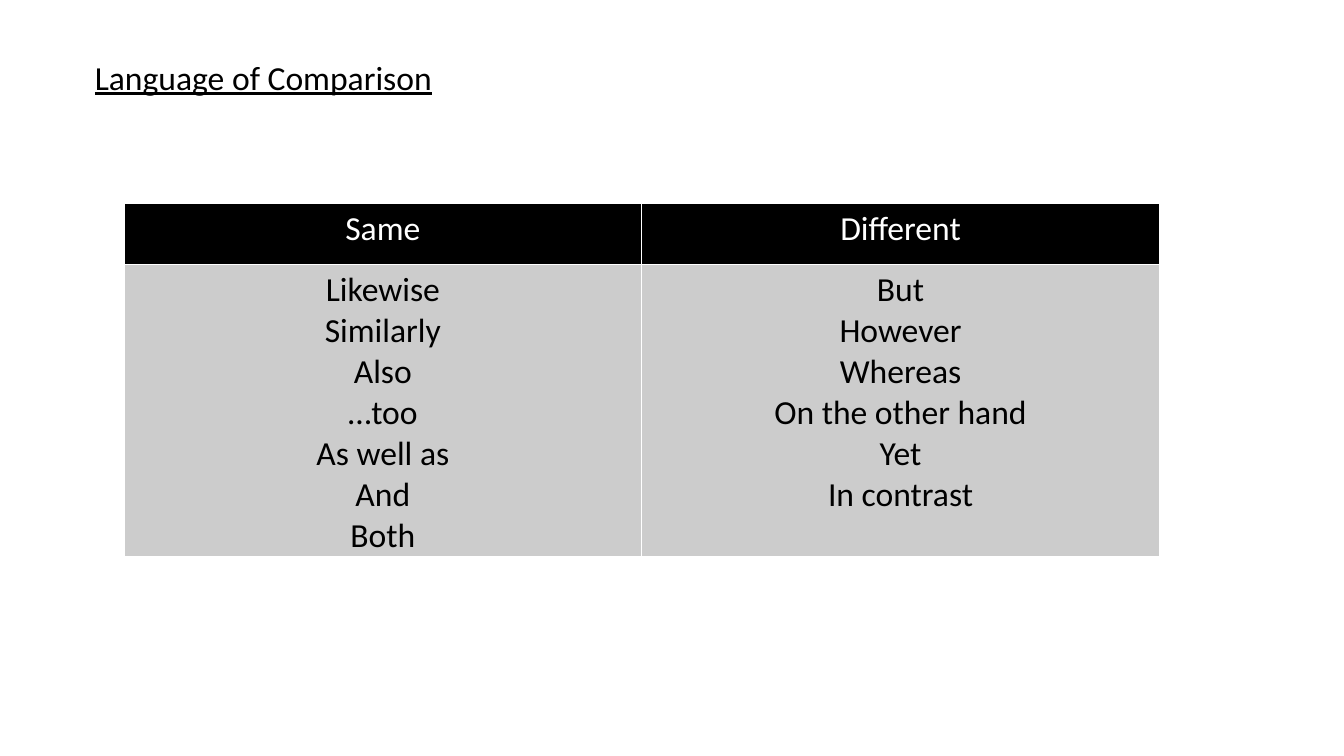
from pptx import Presentation
from pptx.dml.color import RGBColor
from pptx.enum.text import MSO_ANCHOR, MSO_AUTO_SIZE, PP_ALIGN
from pptx.oxml import parse_xml
from pptx.oxml.ns import nsdecls
from pptx.util import Inches, Pt

COLORS = {"black": "000000", "white": "FFFFFF", "grey": "CCCCCC"}
COLUMNS = {
    "Same": ["Likewise", "Similarly", "Also", "…too", "As well as", "And", "Both"],
    "Different": ["But", "However", "Whereas", "On the other hand", "Yet", "In contrast"],
}


def style_paragraph(p, align, color):
    p.alignment = align
    for r in p.runs:
        r.font.name = "Calibri"
        r.font.size = Pt(24)
        r.font.bold = False
        r.font.color.rgb = RGBColor.from_string(COLORS[color])


def fill_cell(cell, lines, fill, color):
    """Write centred lines into a filled cell with thin white borders."""
    cell.text_frame.text = "\n".join(lines)
    for p in cell.text_frame.paragraphs:
        style_paragraph(p, PP_ALIGN.CENTER, color)
    # Borders must come before the fill in the cell properties
    tcPr = cell._tc.get_or_add_tcPr()
    for side in ("lnL", "lnR", "lnT", "lnB"):
        tcPr.append(parse_xml(
            f'<a:{side} {nsdecls("a")} w="{Pt(1)}"><a:solidFill>'
            f'<a:srgbClr val="{COLORS["white"]}"/></a:solidFill></a:{side}>'))
    cell.fill.solid()
    cell.fill.fore_color.rgb = RGBColor.from_string(COLORS[fill])


prs = Presentation()
prs.slide_width, prs.slide_height = Inches(13.33), Inches(7.5)
s = prs.slides.add_slide(prs.slide_layouts[5])

# Title
title = s.shapes.title
title.left, title.top = Inches(0.84), Inches(0.51)
title.width, title.height = Inches(6.64), Inches(0.51)
tf = title.text_frame
tf.text = "Language of Comparison"
tf.word_wrap = True
tf.auto_size = MSO_AUTO_SIZE.SHAPE_TO_FIT_TEXT
tf.vertical_anchor = MSO_ANCHOR.TOP
style_paragraph(tf.paragraphs[0], PP_ALIGN.LEFT, "black")
tf.paragraphs[0].runs[0].font.underline = True

# Comparison table
table = s.shapes.add_table(2, len(COLUMNS), Inches(1.23), Inches(2.02),
                           Inches(10.27), Inches(3.5)).table
table.rows[0].height = Inches(0.6)
table.rows[1].height = Inches(2.9)
for col, (heading, phrases) in enumerate(COLUMNS.items()):
    fill_cell(table.cell(0, col), [heading], "black", "white")
    fill_cell(table.cell(1, col), phrases, "grey", "black")

prs.save("out.pptx")
